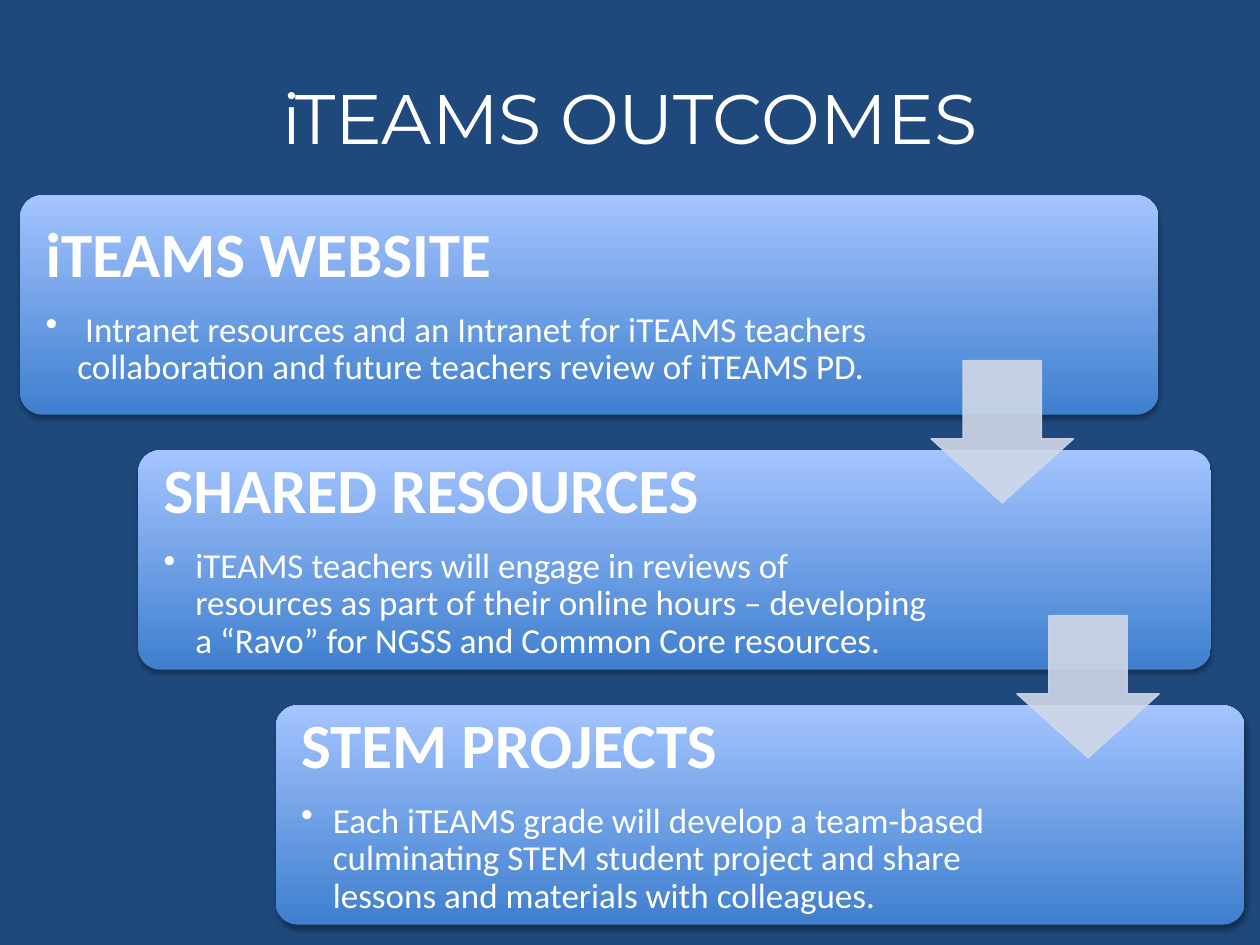
from lxml import etree
from pptx import Presentation
from pptx import util as u
from pptx.dml.color import RGBColor
from pptx.enum import shapes, text
from pptx.oxml.ns import qn

COLORS = {
    "background": "1F497D",
    "text": "FFFFFF",
    "card_bottom": "3F7FCE",
    "card_top": "A4C4FF",
    "arrow": "D0D8E8",
    "shadow": "000000",
}
CARD_TOP, CARD_STEP, CARD_HEIGHT = 3.94, 5.14, 4.42
TEXT_INSET, TEXT_MARGIN = 0.13, 0.38
ARROW_SIZE, ARROW_DROP = 2.87, 3.33
INDENT = u.Cm(0.64)

# Left, width and text width of each card, then its wording
OUTCOMES = [
    (0.41, 22.94, 17.37, "iTEAMS WEBSITE",
     " Intranet resources and an Intranet for iTEAMS teachers "
     "collaboration and future teachers review of iTEAMS PD."),
    (2.79, 21.62, 16.26, "SHARED RESOURCES",
     "iTEAMS teachers will engage in reviews of resources as part of their "
     "online hours – developing a “Ravo” for NGSS and Common Core resources."),
    (5.56, 19.53, 14.68, "STEM PROJECTS",
     "Each iTEAMS grade will develop a team-based culminating STEM student "
     "project and share lessons and materials with colleagues."),
]
ARROW_LEFTS = [18.77, 20.5]


def rgb(name):
    return RGBColor.from_string(COLORS[name])


class OutcomeSlide:
    """Holds the style and the current slide."""

    def __init__(self, slide):
        self.slide = slide
        slide.background.fill.solid()
        slide.background.fill.fore_color.rgb = rgb("background")

    def place(self, shape, box):
        shape.left, shape.top, shape.width, shape.height = map(u.Cm, box)

    def style(self, paragraph, font, size, bold=False):
        for run in paragraph.runs:
            run.font.name = font
            run.font.size = u.Pt(size)
            run.font.bold = bold
            run.font.color.rgb = rgb("text")

    def title(self, wording, box):
        heading = self.slide.shapes.title
        self.place(heading, box)
        frame = heading.text_frame
        frame.text = wording
        frame.vertical_anchor = text.MSO_ANCHOR.MIDDLE
        frame.paragraphs[0].alignment = text.PP_ALIGN.CENTER
        self.style(frame.paragraphs[0], "Montserrat", 40)

    def card(self, box):
        card = self.slide.shapes.add_shape(
            shapes.MSO_SHAPE.ROUNDED_RECTANGLE, *map(u.Cm, box))
        card.adjustments[0] = 0.1
        card.fill.gradient()
        card.fill.gradient_angle = 90
        for stop, name in zip(card.fill.gradient_stops, ("card_bottom", "card_top")):
            stop.color.rgb = rgb(name)
        card.line.fill.background()
        self.drop_shadow(card)

    def drop_shadow(self, shape):
        shape.shadow.inherit = False
        effects = shape._element.spPr.find(qn("a:effectLst"))
        shadow = etree.SubElement(effects, qn("a:outerShdw"), blurRad="40000",
                                  dist="23000", dir="5400000", rotWithShape="0")
        color = etree.SubElement(shadow, qn("a:srgbClr"), val=COLORS["shadow"])
        etree.SubElement(color, qn("a:alpha"), val="35000")

    def card_text(self, box, heading, detail):
        frame = self.slide.shapes.add_textbox(*map(u.Cm, box)).text_frame
        frame.word_wrap = True
        frame.vertical_anchor = text.MSO_ANCHOR.MIDDLE
        frame.margin_left = frame.margin_right = u.Cm(TEXT_MARGIN)
        frame.margin_top = frame.margin_bottom = u.Cm(TEXT_MARGIN)
        frame.text = f"{heading}\n{detail}"
        head, body = frame.paragraphs
        head.line_spacing = body.line_spacing = 0.9
        head.space_after, body.space_after = u.Pt(12), u.Pt(3)
        self.style(head, "Calibri", 36, bold=True)
        self.style(body, "Calibri", 20)
        self.bullet(body)

    def bullet(self, paragraph):
        paragraph.level = 1
        props = paragraph._p.get_or_add_pPr()
        props.set("marL", str(INDENT))
        props.set("indent", str(-INDENT))
        etree.SubElement(props, qn("a:buChar"), char="•")

    def arrow(self, left, top):
        arrow = self.slide.shapes.add_shape(
            shapes.MSO_SHAPE.DOWN_ARROW, *map(u.Cm, (left, top, ARROW_SIZE, ARROW_SIZE)))
        arrow.adjustments[0], arrow.adjustments[1] = 0.55, 0.45
        arrow.shadow.inherit = False
        arrow.line.width = u.Pt(0.75)
        for fill in (arrow.fill, arrow.line.fill):
            fill.solid()
            fill.fore_color.rgb = rgb("arrow")
        for color in arrow._element.spPr.iter(qn("a:srgbClr")):
            etree.SubElement(color, qn("a:alpha"), val="90000")


def main():
    deck = Presentation()
    deck.slide_width, deck.slide_height = u.Cm(25.4), u.Cm(19.05)
    page = OutcomeSlide(deck.slides.add_slide(deck.slide_layouts[5]))

    # Title
    page.title("iTEAMS OUTCOMES", (1.27, 0.76, 22.86, 3.18))

    # Staggered cards
    for row, (left, width, text_width, heading, detail) in enumerate(OUTCOMES):
        top = CARD_TOP + row * CARD_STEP
        page.card((left, top, width, CARD_HEIGHT))
        page.card_text((left + TEXT_INSET, top + TEXT_INSET, text_width,
                        CARD_HEIGHT - 2 * TEXT_INSET), heading, detail)

    # Arrows from each card to the next
    for row, left in enumerate(ARROW_LEFTS):
        page.arrow(left, CARD_TOP + row * CARD_STEP + ARROW_DROP)

    deck.save("out.pptx")


if __name__ == "__main__":
    main()
